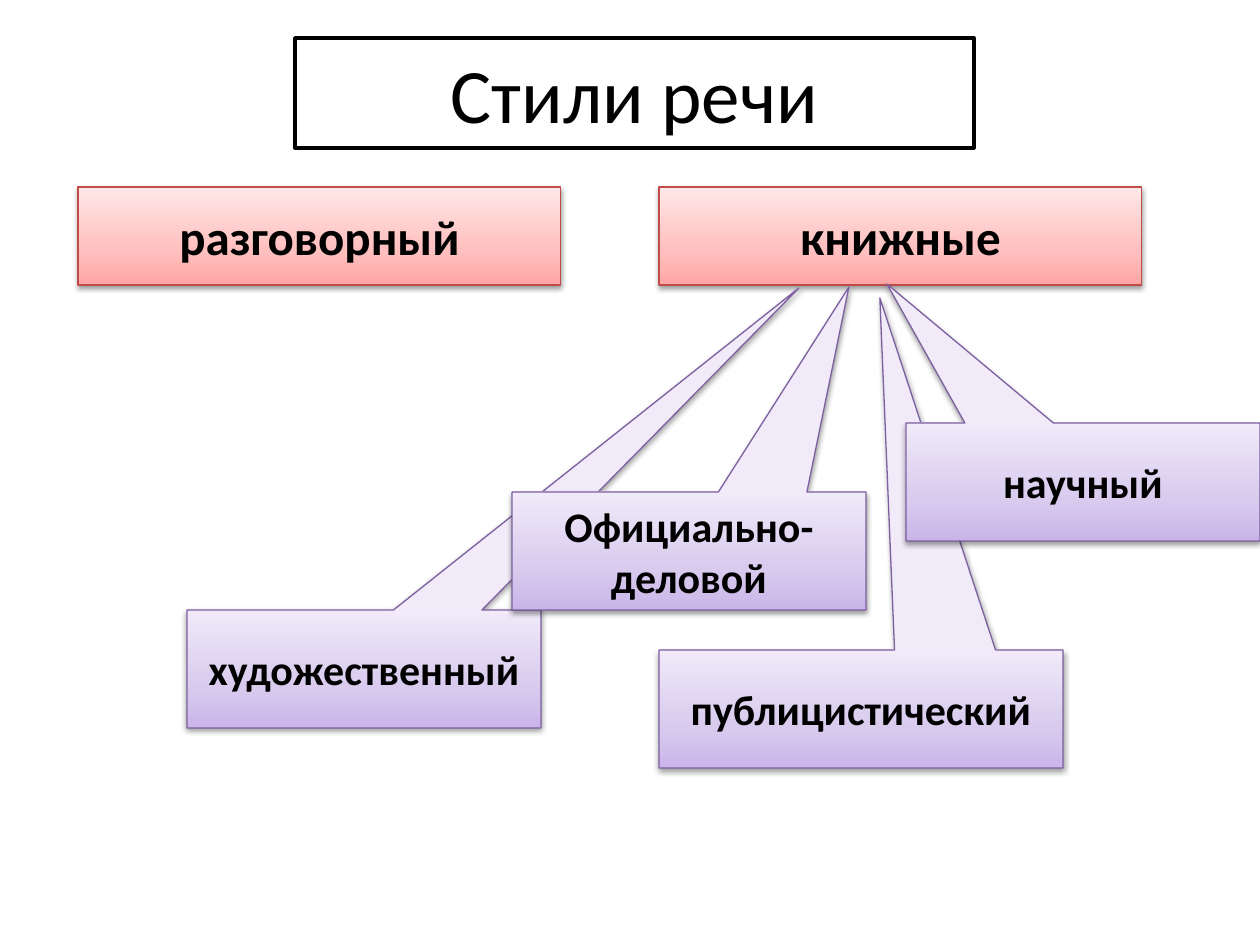
"""Build a slide that sorts the styles of speech with boxes and callouts."""
import pptx
import pptx.util
import pptx.dml.color
import pptx.enum.shapes
import pptx.enum.text
import pptx.oxml
import pptx.oxml.ns

SCALE = 914400 // 126
COLORS = {
    "ink": "000000",
    "red": "BF4C48",
    "violet": "7D60A0",
}
FADES = {
    "red": [(0, "FFA6A5"), (35, "FFC0BF"), (100, "FFE7E7")],
    "violet": [(0, "C9B5E8"), (35, "D8CBEE"), (100, "F0EAF9")],
}
GROUPS = [("разговорный", 78), ("книжные", 659)]
STYLES = [
    ("художественный", (187, 610, 354, 118), (799, 288)),
    ("Официально-деловой", (512, 492, 354, 118), (849, 287)),
    ("публицистический", (659, 650, 404, 118), (880, 298)),
    ("научный", (906, 423, 354, 118), (887, 284)),
]


def px(num):
    """Turn px into EMU."""
    return pptx.util.Emu(num * SCALE)


def color(name):
    """Look up a named colour."""
    return pptx.dml.color.RGBColor.from_string(COLORS[name])


def write(shape, text, size, bold):
    """Set centred text in a shape."""
    frame = shape.text_frame
    frame.text = text
    frame.word_wrap = True
    frame.vertical_anchor = pptx.enum.text.MSO_ANCHOR.MIDDLE
    line = frame.paragraphs[0]
    line.alignment = pptx.enum.text.PP_ALIGN.CENTER
    font = line.runs[0].font
    font.name = "Calibri"
    font.size = pptx.util.Pt(size)
    font.bold = bold
    font.color.rgb = color("ink")


def fade(shape, stops):
    """Fill a shape with a gradient that rises from the bottom."""
    shape.fill.gradient()
    shape.fill.gradient_angle = 90
    space = pptx.oxml.ns.nsdecls("a")
    marks = "".join(
        f'<a:gs pos="{pos * 1000}"><a:srgbClr val="{tone}"/></a:gs>'
        for pos, tone in stops
    )
    old = shape.element.spPr.find(".//" + pptx.oxml.ns.qn("a:gsLst"))
    new = pptx.oxml.parse_xml(f"<a:gsLst {space}>{marks}</a:gsLst>")
    old.getparent().replace(old, new)


def shade(shape):
    """Give a shape a soft shadow below it."""
    shape.shadow.inherit = False
    space = pptx.oxml.ns.nsdecls("a")
    effect = shape.element.spPr.find(pptx.oxml.ns.qn("a:effectLst"))
    effect.append(pptx.oxml.parse_xml(
        f'<a:outerShdw {space} blurRad="40000" dist="20000" dir="5400000" '
        f'rotWithShape="0"><a:srgbClr val="{COLORS["ink"]}">'
        '<a:alpha val="38000"/></a:srgbClr></a:outerShdw>'
    ))


def title(slide, text, rect):
    """Add the framed title."""
    box = slide.shapes.add_textbox(*map(px, rect))
    box.line.color.rgb = color("ink")
    box.line.width = pptx.util.Pt(2)
    write(box, text, 44, False)


def panel(slide, kind, text, rect, hue, size):
    """Add a shaded shape with bold text."""
    shape = slide.shapes.add_shape(kind, *map(px, rect))
    fade(shape, FADES[hue])
    shape.line.color.rgb = color(hue)
    shape.line.width = pptx.util.Pt(0.75)
    shade(shape)
    write(shape, text, size, True)
    return shape


def callout(slide, text, rect, tip):
    """Add a callout whose wedge ends at the tip."""
    kind = pptx.enum.shapes.MSO_SHAPE.RECTANGULAR_CALLOUT
    shape = panel(slide, kind, text, rect, "violet", 24)
    for axis in range(2):
        start, span = rect[axis], rect[axis + 2]
        shape.adjustments[axis] = (tip[axis] - start) / span - 0.5


def main():
    """Build and save the slide."""
    deck = pptx.Presentation()
    deck.slide_width, deck.slide_height = px(1260), px(945)
    slide = deck.slides.add_slide(deck.slide_layouts[6])
    title(slide, "Стили речи", (295, 38, 679, 110))
    for text, left in GROUPS:
        kind = pptx.enum.shapes.MSO_SHAPE.RECTANGLE
        panel(slide, kind, text, (left, 187, 483, 98), "red", 28)
    for text, rect, tip in STYLES:
        callout(slide, text, rect, tip)
    deck.save("out.pptx")


if __name__ == "__main__":
    main()
